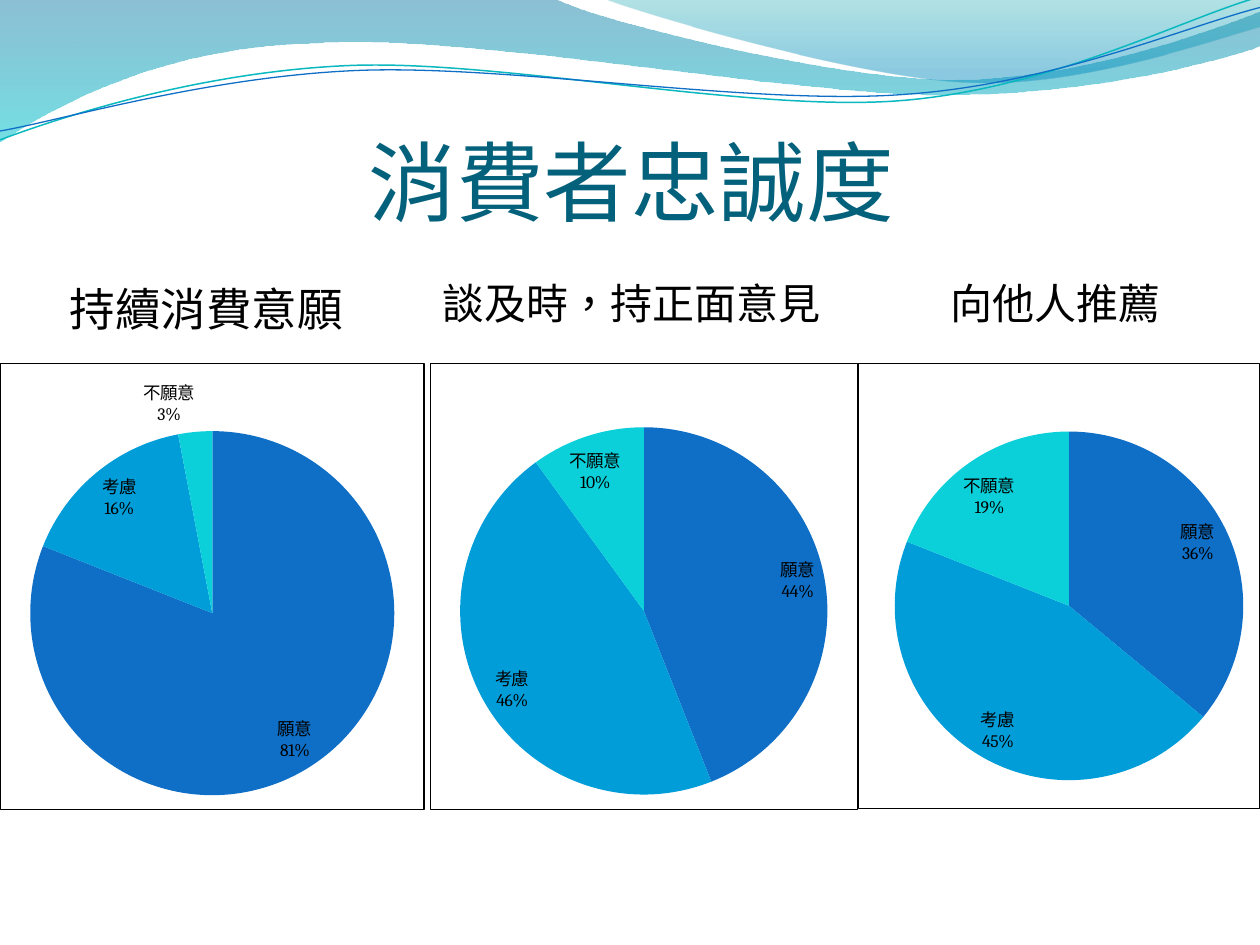
from math import cos, radians, sin

from lxml.etree import SubElement
from pptx import Presentation
from pptx.chart.data import CategoryChartData
from pptx.dml.color import RGBColor
from pptx.enum.chart import XL_CHART_TYPE, XL_LABEL_POSITION
from pptx.enum.text import MSO_ANCHOR, MSO_AUTO_SIZE, PP_ALIGN
from pptx.oxml import parse_xml
from pptx.oxml.ns import nsdecls, qn
from pptx.util import Inches, Pt

NAMES = ["願意", "考慮", "不願意"]
HUES = ["0F6FC6", "009DD9", "0BD0D9"]
TILT = 2.7  # degrees the thin lines lean to the left

# Waves: a start point, then corners (x, y) or Bezier curves (three points)
BANDS = [
    ([(0, 0), (4.4, -0.01), (4.76, 0.17, 6.64, 0.63, 7.58, 0.63),
      (8.53, 0.63, 9.58, 0.26, 10, 0.09), (10.01, 0.36),
      (9.83, 0.44, 8.7, 0.76, 7.46, 0.75), (6.22, 0.75, 3.82, 0.28, 2.57, 0.34),
      (1.29, 0.36, 0.46, 0.83, -0.01, 1.13), (0, 0)],
     [(0, "0074A1", 45), (1, "00C6CF", 55)]),
    ([(4.79, -0.01), (5.09, 0.11, 6.82, 0.62, 7.69, 0.65),
      (8.56, 0.69, 9.61, 0.32, 10, 0.21), (10, 0), (4.79, -0.01)],
     [(0, "00A1A9", 30), (0.8, "008BBF", 45)]),
]
LINES = [
    ([(0, 1.11), (0.48, 0.93, 1.58, 0.57, 2.77, 0.52),
      (3.95, 0.47, 5.93, 0.89, 7.13, 0.8), (8.33, 0.71, 9.38, 0.15, 9.98, -0.02)],
     (4.99, 0.58), "0AB8BF", 0.85),
    ([(0, 1.04), (0.47, 0.96, 1.64, 0.61, 2.83, 0.56),
      (4.03, 0.51, 5.97, 0.84, 7.17, 0.75), (8.36, 0.67, 9.41, 0.21, 10, 0.06)],
     (5, 0.59), "0F6FC6", 0.75),
]


def color(code):
    return RGBColor.from_string(code)


def place(shape, box):
    shape.left, shape.top, shape.width, shape.height = map(Inches, box)


def turn(part, mid, angle):
    """Turn the points of one path part about a middle point."""
    c, s = cos(radians(angle)), sin(radians(angle))
    out = []
    for x, y in zip(part[::2], part[1::2]):
        x, y = x - mid[0], y - mid[1]
        out += [mid[0] + x * c - y * s, mid[1] + x * s + y * c]
    return out


def draw(slide, path, close):
    pts = [(Inches(x), Inches(y)) for part in path for x, y in zip(part[::2], part[1::2])]
    pen = slide.shapes.build_freeform(*pts[0])
    pen.add_line_segments(pts[1:], close=close)
    shape = pen.convert_to_shape()
    shape.shadow.inherit = False
    # Join each three points of a curve into one Bezier segment
    legs = iter(list(shape._element.iter(qn("a:lnTo"))))
    for part in path[1:]:
        leg = next(legs)
        if len(part) == 6:
            leg.tag = qn("a:cubicBezTo")
            for _ in range(2):
                extra = next(legs)
                leg.append(extra[0])
                extra.getparent().remove(extra)
    return shape


def add_waves(slide):
    # Tinted bands
    for path, stops in BANDS:
        band = draw(slide, path, True)
        band.line.fill.background()
        band.fill.gradient()
        band.fill.gradient_angle = 270
        for stop, (pos, code, _) in zip(band.fill.gradient_stops, stops):
            stop.position = pos
            stop.color.rgb = color(code)
        marks = band._element.spPr.iter(qn("a:srgbClr"))
        for mark, (_, _, alpha) in zip(marks, stops):
            SubElement(mark, qn("a:alpha")).set("val", str(alpha * 1000))
    # Thin lines, drawn level and then tilted
    for path, mid, code, width in LINES:
        line = draw(slide, [turn(part, mid, TILT) for part in path], False)
        line.rotation = -TILT
        line.fill.background()
        line.line.color.rgb = color(code)
        line.line.width = Pt(width)


def write(shape, text, size, font, code):
    frame = shape.text_frame
    frame.word_wrap = True
    frame.auto_size = MSO_AUTO_SIZE.NONE
    frame.text = text
    para = frame.paragraphs[0]
    para.alignment = PP_ALIGN.CENTER
    para.font.size = Pt(size)
    para.font.name = font
    para.font.color.rgb = color(code)
    para.runs[0]._r.get_or_add_rPr().set("lang", "zh-TW")
    return para


def add_title(slide, box):
    title = slide.shapes.title
    place(title, box)
    write(title, "消費者忠誠度", 50, "Calibri", "04617B")
    frame = title.text_frame
    frame.vertical_anchor = MSO_ANCHOR.BOTTOM
    frame.margin_left = frame.margin_right = frame.margin_bottom = 0


def add_lead(slide, box, text):
    body = slide.placeholders[1]
    place(body, box)
    para = write(body, text, 26, "Arial", "000000")
    props = para._p.get_or_add_pPr()
    props.set("marL", str(Inches(0.09)))
    props.set("indent", "0")
    props.insert_element_before(parse_xml(f"<a:buNone {nsdecls('a')}/>"), "a:defRPr")


def add_head(slide, box, text):
    head = slide.shapes.add_textbox(*map(Inches, box))
    write(head, text, 24, "Arial", "000000")


def add_pie(slide, box, vals, plot):
    data = CategoryChartData()
    data.categories = NAMES
    data.add_series("Series 1", vals)
    chart = slide.shapes.add_chart(XL_CHART_TYPE.PIE, *map(Inches, box), data).chart
    chart.has_legend = chart.has_title = False
    chart.font.name = "Cambria"
    chart.font.size = Pt(10)
    chart.font.color.rgb = color("000000")

    # Slices and labels
    series = chart.plots[0].series[0]
    for i, hue in enumerate(HUES):
        fill = series.points[i].format.fill
        fill.solid()
        fill.fore_color.rgb = color(hue)
    labels = series.data_labels
    labels.show_category_name = labels.show_percentage = True
    labels.show_value = False
    labels.position = XL_LABEL_POSITION.BEST_FIT
    last = next(series._element.iter(qn("c:showBubbleSize"), qn("c:showPercent")))
    for last in series._element.iter(qn("c:showBubbleSize")):
        break
    last.addnext(parse_xml(f"<c:separator {nsdecls('c')}>\n</c:separator>"))

    # Plot place and frame
    area = chart._chartSpace.chart.plotArea
    for old in area.findall(qn("c:layout")):
        area.remove(old)
    sides = "".join(f'<c:{k} val="{v}"/>' for k, v in zip("xywh", plot))
    area.insert(0, parse_xml(
        f'<c:layout {nsdecls("c")}><c:manualLayout><c:layoutTarget val="inner"/>'
        f'<c:xMode val="edge"/><c:yMode val="edge"/>{sides}</c:manualLayout></c:layout>'))
    chart._chartSpace.chart.addnext(parse_xml(
        f'<c:spPr {nsdecls("c", "a")}><a:noFill/><a:ln w="{Pt(0.75)}"><a:solidFill>'
        '<a:srgbClr val="000000"/></a:solidFill></a:ln></c:spPr>'))


def main():
    deck = Presentation()
    deck.slide_width, deck.slide_height = Inches(10), Inches(7.5)
    slide = deck.slides.add_slide(deck.slide_layouts[1])
    add_waves(slide)
    for holder in list(slide.placeholders):  # text in front of the waves
        slide.shapes._spTree.append(holder._element)
    add_title(slide, (1.25, 0.84, 7.52, 1.01))
    add_lead(slide, (0.1, 2.18, 2.99, 0.51), "持續消費意願")
    add_head(slide, (3.37, 2.15, 3.28, 0.5), "談及時，持正面意見")
    add_head(slide, (7.28, 2.15, 2.2, 0.5), "向他人推薦")
    add_pie(slide, (0, 2.88, 3.37, 3.55), (81, 16, 3), (0.07, 0.15, 0.86, 0.82))
    add_pie(slide, (6.81, 2.88, 3.19, 3.54), (36, 45, 19), (0.09, 0.15, 0.87, 0.79))
    add_pie(slide, (3.41, 2.88, 3.4, 3.55), (44, 46, 10), (0.07, 0.14, 0.86, 0.83))
    deck.save("out.pptx")


if __name__ == "__main__":
    main()
